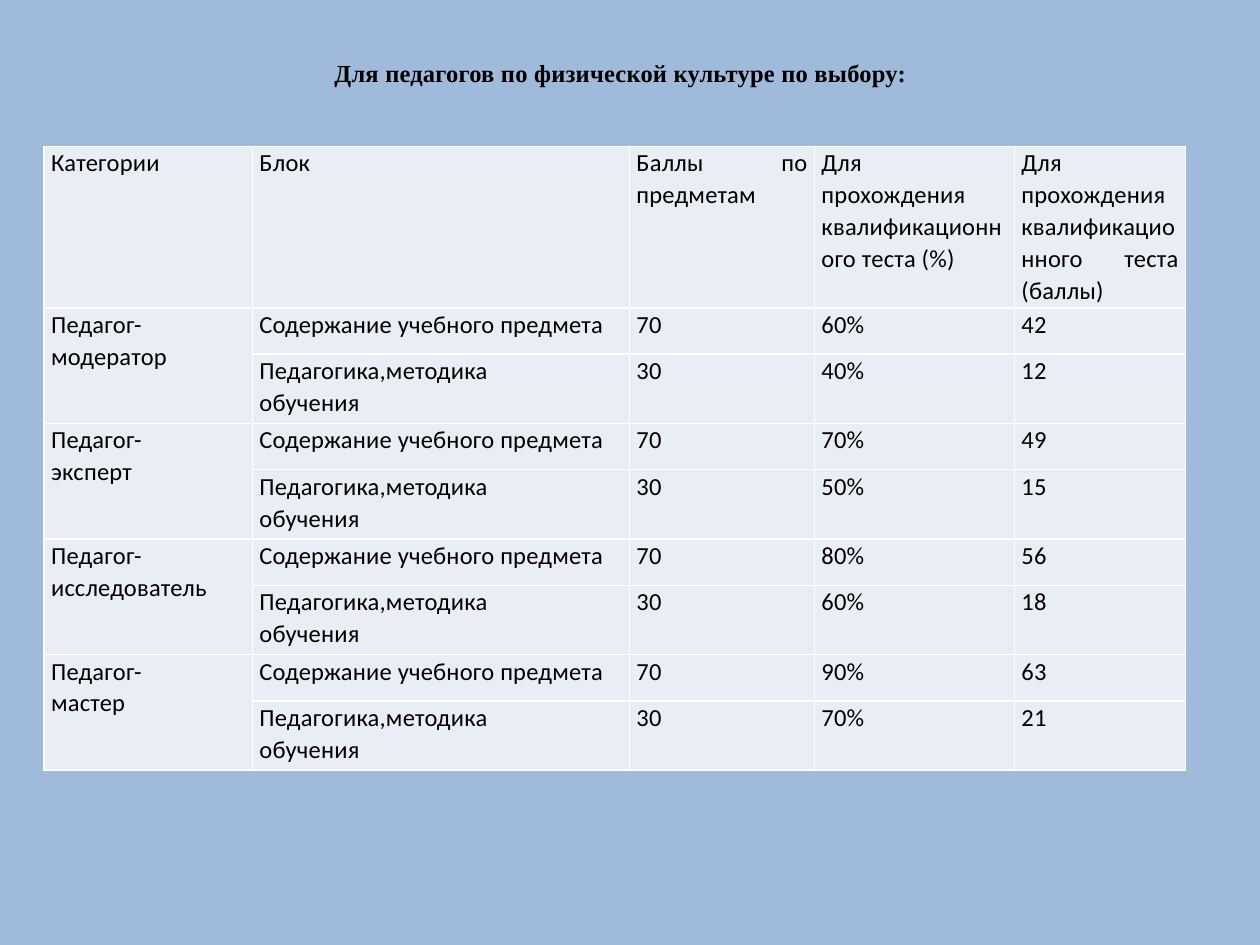
import pptx
import pptx.dml.color
import pptx.enum.shapes
import pptx.enum.text
import pptx.oxml
import pptx.oxml.ns
import pptx.util
from lxml import etree

Cm = pptx.util.Cm
Pt = pptx.util.Pt
ALIGN = pptx.enum.text.PP_ALIGN
COLORS = {"background": "95B3D7", "cell": "E9EDF4", "border": "FFFFFF", "text": "000000"}

HEADERS = [
    "Категории",
    "Блок",
    "Баллы по предметам",
    "Для прохождения квалификационного теста (%)",
    "Для прохождения квалификационного теста (баллы)",
]
BLOCKS = [("Содержание учебного предмета", 70), ("Педагогика,методика\nобучения ", 30)]
# Pass mark in percent for each block
CATEGORIES = {
    "модератор": (60, 40),
    "эксперт": (70, 50),
    "исследователь": (80, 60),
    "мастер": (90, 70),
}
COLUMN_WIDTHS = [4.2, 7.6, 3.73, 4.03, 3.45]
HEADER_HEIGHT = 3.26
BLOCK_HEIGHTS = [0.93, 1.4]


def rgb(name):
    return pptx.dml.color.RGBColor.from_string(COLORS[name])


def style_paragraph(paragraph, font_name, alignment, bold=False):
    paragraph.alignment = alignment
    font = paragraph.font
    font.name, font.size, font.bold = font_name, Pt(14), bold
    font.color.rgb = rgb("text")
    # Letter spacing of 0.1 pt
    paragraph._p.get_or_add_pPr().get_or_add_defRPr().set("spc", "10")


presentation = pptx.Presentation()
presentation.slide_width, presentation.slide_height = Cm(25.4), Cm(19.05)
slide = presentation.slides.add_slide(presentation.slide_layouts[6])

# Translucent background panel
panel = slide.shapes.add_shape(
    pptx.enum.shapes.MSO_SHAPE.RECTANGLE, Cm(-0.03), Cm(-0.05), Cm(25.43), Cm(19.13)
)
panel.shadow.inherit = False
panel.line.fill.background()
panel.fill.solid()
panel.fill.fore_color.rgb = rgb("background")
panel_color = panel._element.spPr.find(".//" + pptx.oxml.ns.qn("a:srgbClr"))
etree.SubElement(panel_color, pptx.oxml.ns.qn("a:alpha")).set("val", "90000")

# Title
title = slide.shapes.add_textbox(Cm(0.71), Cm(1.02), Cm(23.6), Cm(1.63))
title.text_frame.word_wrap = True
title.text_frame.margin_top = Cm(0.16)
title.text_frame.text = "Для педагогов по физической культуре по выбору:"
style_paragraph(title.text_frame.paragraphs[0], "Times New Roman", ALIGN.CENTER, bold=True)

# Table contents: two block rows for each category
rows = [HEADERS]
for category, percents in CATEGORIES.items():
    for index, ((block, points), percent) in enumerate(zip(BLOCKS, percents)):
        label = "" if index else f"Педагог-\n{category}"
        rows.append([label, block, str(points), f"{percent}%", str(points * percent // 100)])
row_heights = [HEADER_HEIGHT] + BLOCK_HEIGHTS * len(CATEGORIES)

table = slide.shapes.add_table(
    len(rows), len(HEADERS), Cm(0.89), Cm(2.95), Cm(sum(COLUMN_WIDTHS)), Cm(sum(row_heights))
).table
table.first_row = table.horz_banding = False
for column, width in zip(table.columns, COLUMN_WIDTHS):
    column.width = Cm(width)
for row, height in zip(table.rows, row_heights):
    row.height = Cm(height)

for row_index, texts in enumerate(rows):
    for column_index, text in enumerate(texts):
        cell = table.cell(row_index, column_index)
        cell.margin_left = cell.margin_right = Cm(0.14)
        cell.margin_top = cell.margin_bottom = 0
        cell.text_frame.text = text
        for paragraph in cell.text_frame.paragraphs:
            style_paragraph(paragraph, "Calibri", ALIGN.JUSTIFY)
            paragraph.line_spacing = 1.07
        properties = cell._tc.get_or_add_tcPr()
        for side in ("lnL", "lnR", "lnT", "lnB"):
            properties.append(pptx.oxml.parse_xml(
                f'<a:{side} {pptx.oxml.ns.nsdecls("a")} w="{Pt(1)}"><a:solidFill>'
                f'<a:srgbClr val="{COLORS["border"]}"/></a:solidFill></a:{side}>'
            ))
        cell.fill.solid()
        cell.fill.fore_color.rgb = rgb("cell")

for first_row in range(1, len(rows), len(BLOCKS)):
    table.cell(first_row, 0).merge(table.cell(first_row + len(BLOCKS) - 1, 0))

presentation.save("out.pptx")
